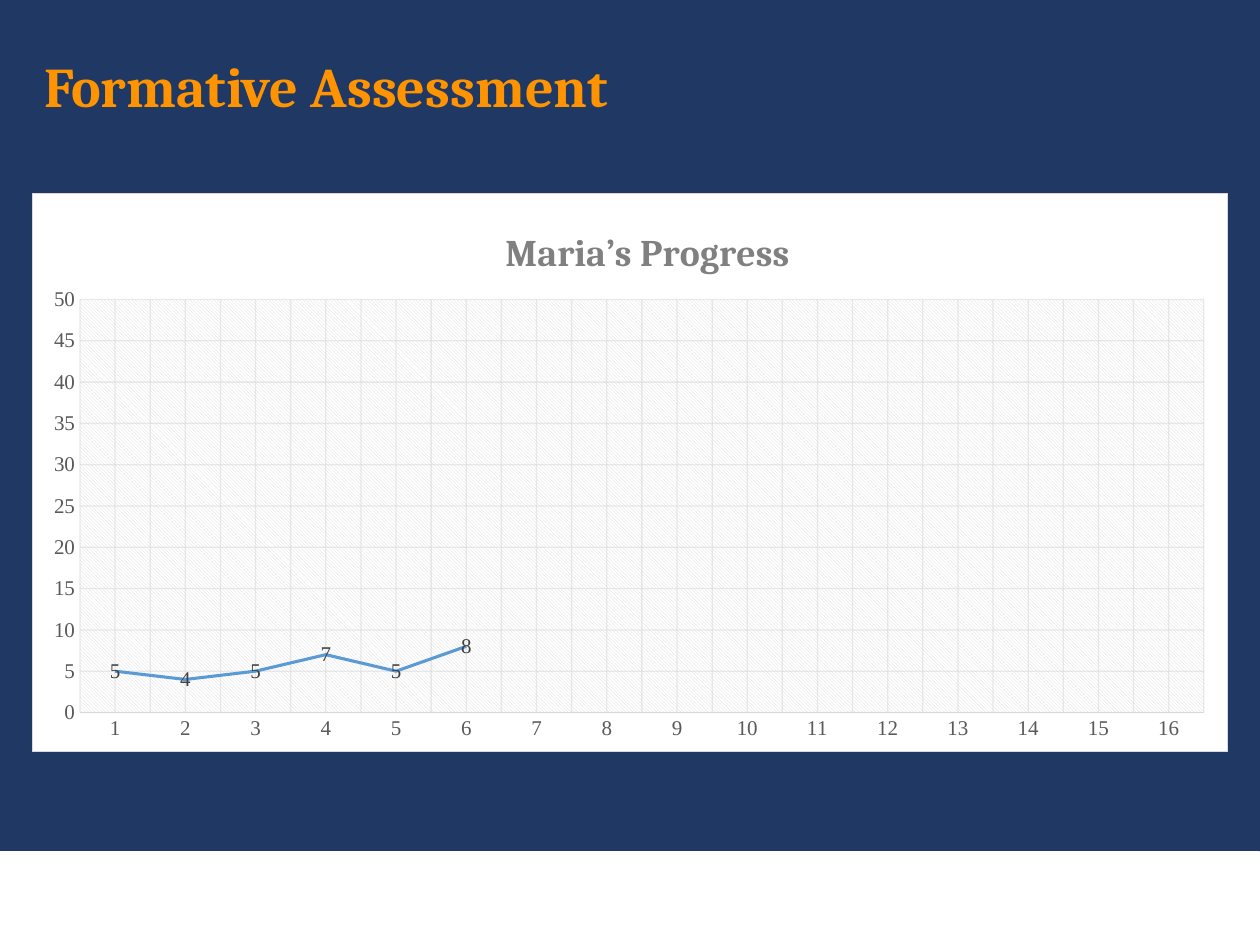
"""Build the Formative Assessment slide with a line chart of weekly progress."""
from pptx import Presentation
from pptx.chart.data import CategoryChartData
from pptx.dml.color import RGBColor
from pptx.enum.chart import XL_CHART_TYPE as CT, XL_LABEL_POSITION as LP
from pptx.enum.chart import XL_MARKER_STYLE as MS, XL_TICK_MARK as TM
from pptx.enum.shapes import MSO_SHAPE
from pptx.enum.text import MSO_ANCHOR, PP_ALIGN
from pptx.oxml import parse_xml
from pptx.oxml.ns import nsdecls
from pptx.util import Pt

NAVY = RGBColor(0x20, 0x38, 0x64)
WHITE = RGBColor(0xFF, 0xFF, 0xFF)
ORANGE = RGBColor(0xFF, 0x93, 0x00)
GREY = RGBColor(0x80, 0x80, 0x80)
AXIS_TEXT = RGBColor(0x59, 0x59, 0x59)
LABEL_TEXT = RGBColor(0x40, 0x40, 0x40)
RULE = RGBColor(0xD9, 0xD9, 0xD9)
BLUE = RGBColor(0x5B, 0x9B, 0xD5)
BLACK = RGBColor(0, 0, 0)
SERIF = "Times New Roman"


def write(tf, text, size=12, color=BLACK, font="Cambria", bold=True, spacing=None):
    p = tf.paragraphs[0]
    p.line_spacing = spacing
    r = p.add_run()
    r.text = text
    r.font.size, r.font.name, r.font.bold = Pt(size), font, bold
    r.font.color.rgb = color
    return p


def layout(tag, **fractions):
    modes = '<c:xMode val="edge"/><c:yMode val="edge"/>'
    values = "".join(f'<c:{k} val="{v}"/>' for k, v in fractions.items())
    return parse_xml(f'<c:layout {nsdecls("c")}><c:manualLayout>{tag}{modes}{values}'
                     '</c:manualLayout></c:layout>')


prs = Presentation()
prs.slide_width, prs.slide_height = Pt(720), Pt(540)
s = prs.slides.add_slide(prs.slide_layouts[5])
s.background.fill.solid()
s.background.fill.fore_color.rgb = NAVY

band = s.shapes.add_shape(MSO_SHAPE.RECTANGLE, Pt(0), Pt(486.5), Pt(719.5), Pt(53.5))
band.shadow.inherit = False
band.fill.solid()
band.fill.fore_color.rgb = WHITE
band.line.color.rgb = WHITE
band.line.width = Pt(1)

title = s.shapes.title
title.left, title.top, title.width, title.height = Pt(18), Pt(18), Pt(684), Pt(57.6)
title.fill.solid()
title.fill.fore_color.rgb = NAVY
title.text_frame.vertical_anchor = MSO_ANCHOR.MIDDLE
p = write(title.text_frame, "Formative Assessment", size=32, color=ORANGE, spacing=1.1)
p.alignment = PP_ALIGN.LEFT

scores = [5, 4, 5, 7, 5, 8]
data = CategoryChartData()
data.categories = [str(week) for week in range(1, 17)]
data.add_series("Series 1", scores + [None] * (16 - len(scores)))
chart = s.shapes.add_chart(CT.LINE, Pt(18), Pt(110.2), Pt(684), Pt(319.7), data).chart
chart.has_legend = False
chart.font.size, chart.font.name = Pt(10), SERIF
chart.font.color.rgb = BLACK
chart.has_title = True
write(chart.chart_title.text_frame, "Maria’s Progress", size=21.6, color=GREY)

cat, val = chart.category_axis, chart.value_axis
val.minimum_scale, val.maximum_scale, val.major_unit = 0, 50, 5
cat.has_major_gridlines = cat.has_minor_gridlines = val.has_major_gridlines = True
for axis in (cat, val):
    axis.major_tick_mark = axis.minor_tick_mark = TM.NONE
    font = axis.tick_labels.font
    font.size, font.name = Pt(12), SERIF
    font.color.rgb = AXIS_TEXT
for part in (cat, cat.major_gridlines, val.major_gridlines):
    part.format.line.color.rgb = RULE
    part.format.line.width = Pt(0.75)
val.format.line.fill.background()

plot = chart.plots[0]
plot.vary_by_categories = False
ser = plot.series[0]
ser.smooth = False
ser.marker.style = MS.NONE
ser.format.line.color.rgb = BLUE
ser.format.line.width = Pt(1.75)
labels = ser.data_labels
labels.show_value = True
labels.position = LP.CENTER
labels.font.size, labels.font.name = Pt(12), SERIF
labels.font.color.rgb = LABEL_TEXT

space = chart.element
for color in space.xpath(".//c:majorGridlines//a:srgbClr"):
    color.append(parse_xml(f'<a:alpha {nsdecls("a")} val="54000"/>'))
minor = space.xpath(".//c:minorGridlines")[0]
minor.append(parse_xml(
    f'<c:spPr {nsdecls("c", "a")}><a:ln w="9525"><a:solidFill><a:srgbClr val="{RULE}">'
    '<a:alpha val="54000"/></a:srgbClr></a:solidFill></a:ln></c:spPr>'))
for old in space.xpath(".//c:plotArea/c:layout | .//c:chart/c:title/c:layout"):
    old.getparent().remove(old)
area = space.xpath(".//c:plotArea")[0]
area.insert(0, layout('<c:layoutTarget val="inner"/>', x=0.04, y=0.19, w=0.94, h=0.74))
space.xpath(".//c:chart/c:title/c:tx")[0].addnext(layout("", x=0.39, y=0.05))
area.append(parse_xml(
    f'<c:spPr {nsdecls("c", "a")}><a:pattFill prst="ltDnDiag">'
    f'<a:fgClr><a:srgbClr val="{RULE}"/></a:fgClr>'
    f'<a:bgClr><a:srgbClr val="{WHITE}"/></a:bgClr></a:pattFill></c:spPr>'))
space.xpath("./c:chart")[0].addnext(parse_xml(
    f'<c:spPr {nsdecls("c", "a")}><a:solidFill><a:srgbClr val="{WHITE}"/></a:solidFill>'
    f'<a:ln w="9525"><a:solidFill><a:srgbClr val="{RULE}"/></a:solidFill></a:ln></c:spPr>'))

prs.save("out.pptx")
